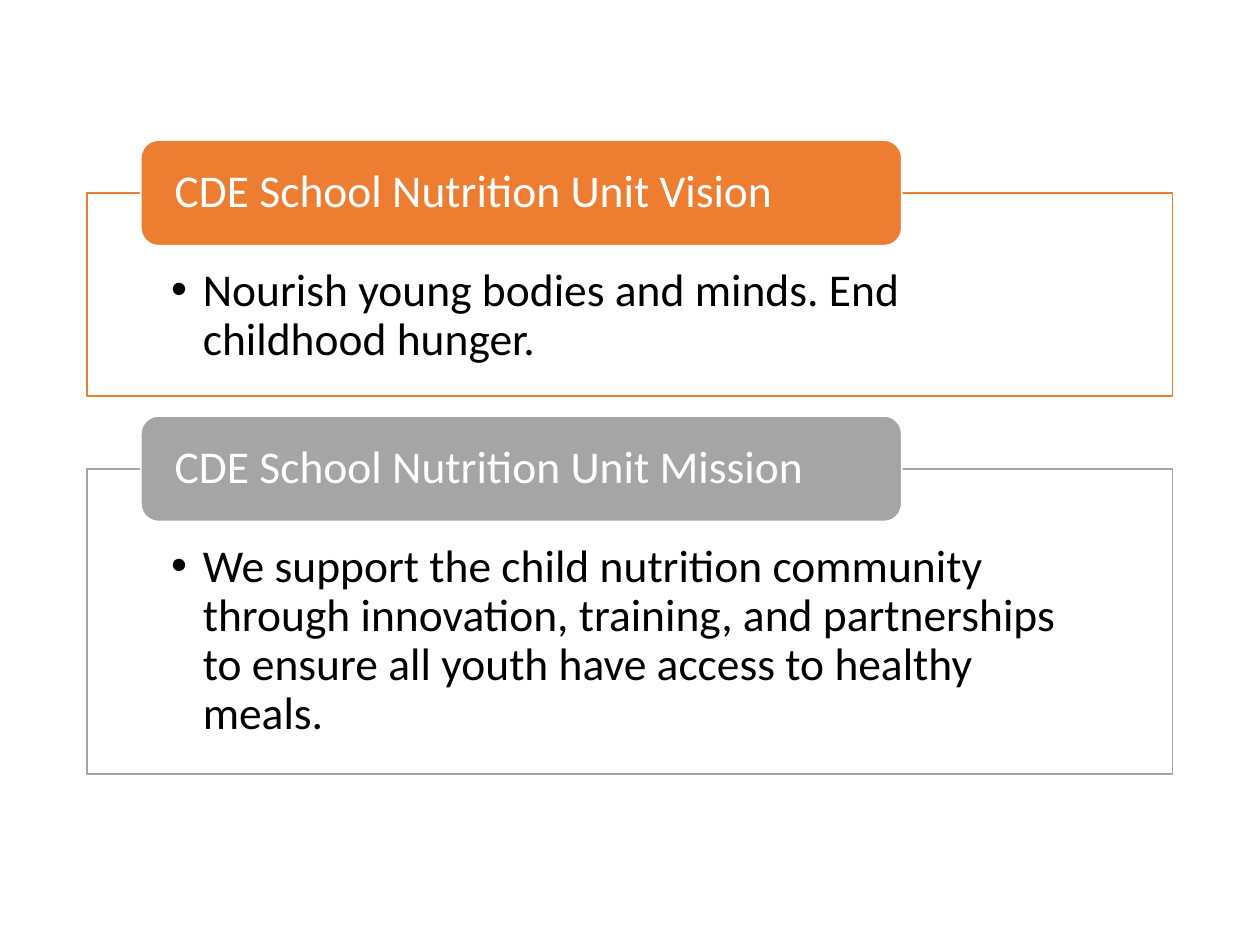
from dataclasses import dataclass

from lxml.etree import SubElement
from pptx import Presentation
from pptx.dml.color import RGBColor
from pptx.enum.shapes import MSO_SHAPE
from pptx.enum.text import MSO_ANCHOR, PP_ALIGN
from pptx.oxml.ns import qn
from pptx.util import Cm, Pt


@dataclass(frozen=True)
class Theme:
    font: str = "Calibri"
    text_size: int = 26
    line_width: int = 1
    white: str = "FFFFFF"
    black: str = "000000"
    orange: str = "ED7D31"
    gray: str = "A5A5A5"


class StatementSlide:
    left, width = 1.75, 21.89
    heading_left, heading_width, heading_height = 2.84, 15.34, 2.13

    def __init__(self, slide, theme):
        self.slide = slide
        self.theme = theme

    def box(self, preset, position, fill, line, margins):
        shape = self.slide.shapes.add_shape(preset, *map(Cm, position))
        shape.shadow.inherit = False
        shape.fill.solid()
        shape.fill.fore_color.rgb = RGBColor.from_string(fill)
        shape.line.color.rgb = RGBColor.from_string(line)
        shape.line.width = Pt(self.theme.line_width)
        frame = shape.text_frame
        frame.word_wrap = True
        frame.margin_left = frame.margin_right = Cm(margins[0])
        frame.margin_top, frame.margin_bottom = Cm(margins[1]), Cm(margins[2])
        return shape

    def set_text(self, paragraph, text, color):
        paragraph.text = text
        paragraph.alignment = PP_ALIGN.LEFT
        paragraph.line_spacing = 0.9
        paragraph.font.name = self.theme.font
        paragraph.font.size = Pt(self.theme.text_size)
        paragraph.font.color.rgb = RGBColor.from_string(color)

    def panel(self, top, height, color, text):
        position = (self.left, top, self.width, height)
        shape = self.box(MSO_SHAPE.RECTANGLE, position, self.theme.white, color, (1.7, 1.5, 0.5))
        fill_color = shape._element.spPr.find(qn("a:solidFill"))[0]
        SubElement(fill_color, qn("a:alpha"), val="90000")
        shape.text_frame.vertical_anchor = MSO_ANCHOR.TOP
        paragraph = shape.text_frame.paragraphs[0]
        properties = paragraph._p.get_or_add_pPr()
        properties.set("marL", str(Cm(0.64)))
        properties.set("indent", str(-Cm(0.64)))
        SubElement(properties, qn("a:buFont"), typeface="Arial")
        SubElement(properties, qn("a:buChar"), char="•")
        self.set_text(paragraph, text, self.theme.black)

    def heading(self, panel_top, color, text):
        position = (self.heading_left, panel_top - self.heading_height / 2,
                    self.heading_width, self.heading_height)
        shape = self.box(MSO_SHAPE.ROUNDED_RECTANGLE, position, color, self.theme.white, (0.58, 0, 0))
        shape.text_frame.vertical_anchor = MSO_ANCHOR.MIDDLE
        self.set_text(shape.text_frame.paragraphs[0], text, self.theme.white)


def main():
    presentation = Presentation()
    presentation.slide_width, presentation.slide_height = Cm(25.4), Cm(19.05)
    theme = Theme()
    slide = StatementSlide(presentation.slides.add_slide(presentation.slide_layouts[6]), theme)
    statements = [
        (3.89, 4.09, theme.orange, "CDE School Nutrition Unit Vision",
         "Nourish young bodies and minds. End childhood hunger."),
        (9.45, 6.15, theme.gray, "CDE School Nutrition Unit Mission",
         "We support the child nutrition community through innovation, training, "
         "and partnerships to ensure all youth have access to healthy meals."),
    ]
    for top, height, color, title, text in statements:
        slide.panel(top, height, color, text)
        slide.heading(top, color, title)
    presentation.save("out.pptx")


if __name__ == "__main__":
    main()
